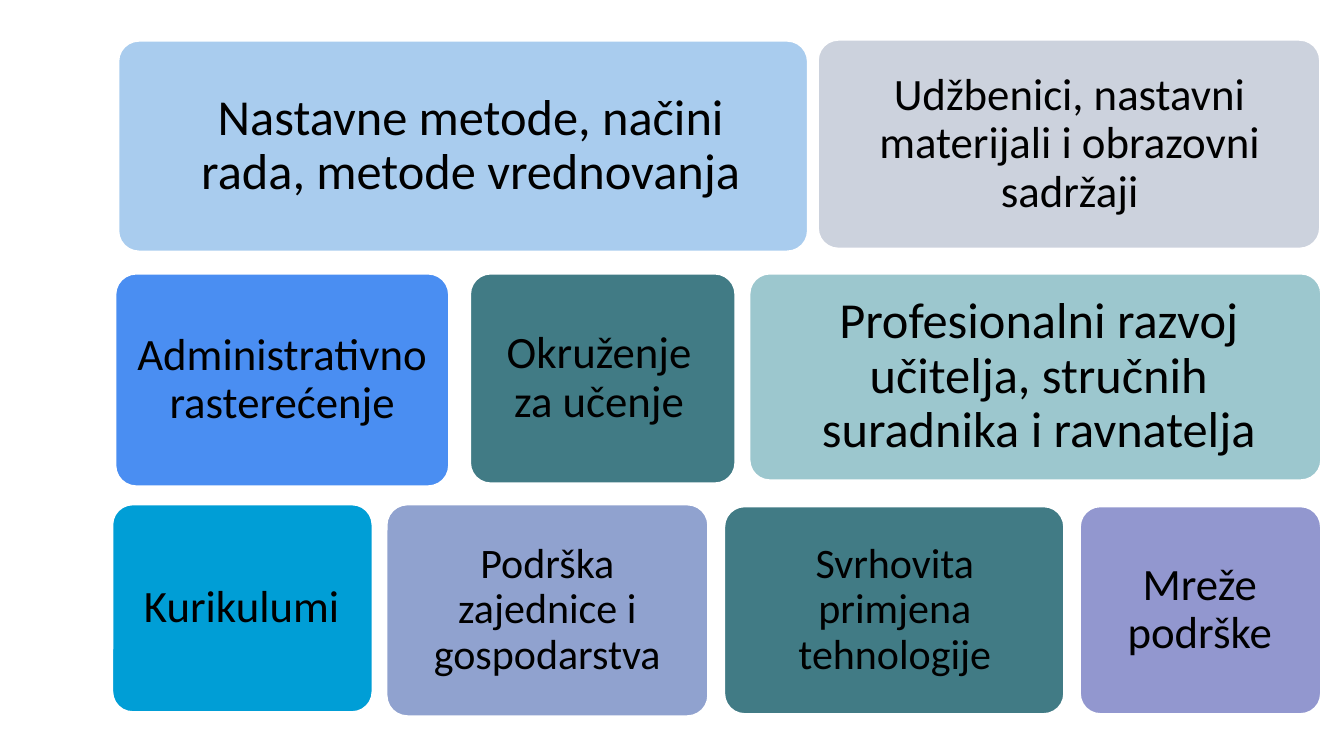
import pptx
import pptx.util
import pptx.dml.color
import pptx.enum.shapes
import pptx.enum.text

Pt = pptx.util.Pt

COLOURS = {
    "text": "000000",
    "border": "FFFFFF",
    "sky": "A9CCEE",
    "grey": "CCD2DD",
    "blue": "4A8EF2",
    "teal": "417B85",
    "aqua": "9CC7CE",
    "cyan": "009ED6",
    "periwinkle": "90A2CF",
    "violet": "9297CF",
}

# Each topic: wording, colour, font size, (left, top, width, height), (left, right) text inset
TOPICS = [
    # Top row
    ("Nastavne metode, načini rada, metode vrednovanja", "sky", 36,
     (84.2, 28.8, 493.2, 151.2), (27, 16)),
    ("Udžbenici, nastavni materijali i obrazovni sadržaji", "grey", 32,
     (583.9, 28.1, 359.3, 149.8), (9, 8)),
    # Middle row
    ("Administrativno rasterećenje", "blue", 32,
     (82.1, 195.1, 239, 152.6), (11, 11)),
    ("Okruženje za učenje", "teal", 32,
     (335.5, 195.1, 190.1, 150.5), (15, 20)),
    ("Profesionalni razvoj učitelja, stručnih suradnika i ravnatelja", "aqua", 36,
     (535, 195.1, 409, 148.3), (17, 12)),
    # Bottom row
    ("Kurikulumi", "cyan", 32,
     (79.9, 360, 186.5, 149), (7, 8)),
    ("Podrška zajednice i gospodarstva", "periwinkle", 30,
     (275.8, 360, 230.4, 151.9), (11, 11)),
    ("Svrhovita primjena tehnologije", "teal", 30,
     (517, 361.4, 243.4, 149), (24, 23)),
    ("Mreže podrške", "violet", 32,
     (771.1, 361.4, 172.8, 149), (7, 8)),
]


def rgb(name):
    return pptx.dml.color.RGBColor.from_string(COLOURS[name])


def add_topic(slide, wording, colour, size, box, insets):
    tile = slide.shapes.add_shape(
        pptx.enum.shapes.MSO_SHAPE.ROUNDED_RECTANGLE, *map(Pt, box))
    tile.adjustments[0] = 0.1
    tile.shadow.inherit = False
    tile.fill.solid()
    tile.fill.fore_color.rgb = rgb(colour)
    tile.line.color.rgb = rgb("border")
    tile.line.width = Pt(2)

    # Centred label
    label = tile.text_frame
    label.word_wrap = True
    label.vertical_anchor = pptx.enum.text.MSO_ANCHOR.MIDDLE
    label.margin_left, label.margin_right = map(Pt, insets)
    label.margin_top = label.margin_bottom = Pt(6)
    paragraph = label.paragraphs[0]
    paragraph.text = wording
    paragraph.alignment = pptx.enum.text.PP_ALIGN.CENTER
    paragraph.line_spacing = 0.9
    paragraph.font.name = "Calibri"
    paragraph.font.size = Pt(size)
    paragraph.font.color.rgb = rgb("text")


def main():
    deck = pptx.Presentation()
    deck.slide_width, deck.slide_height = Pt(960), Pt(540)
    slide = deck.slides.add_slide(deck.slide_layouts[6])
    for topic in TOPICS:
        add_topic(slide, *topic)
    deck.save("out.pptx")


if __name__ == "__main__":
    main()
